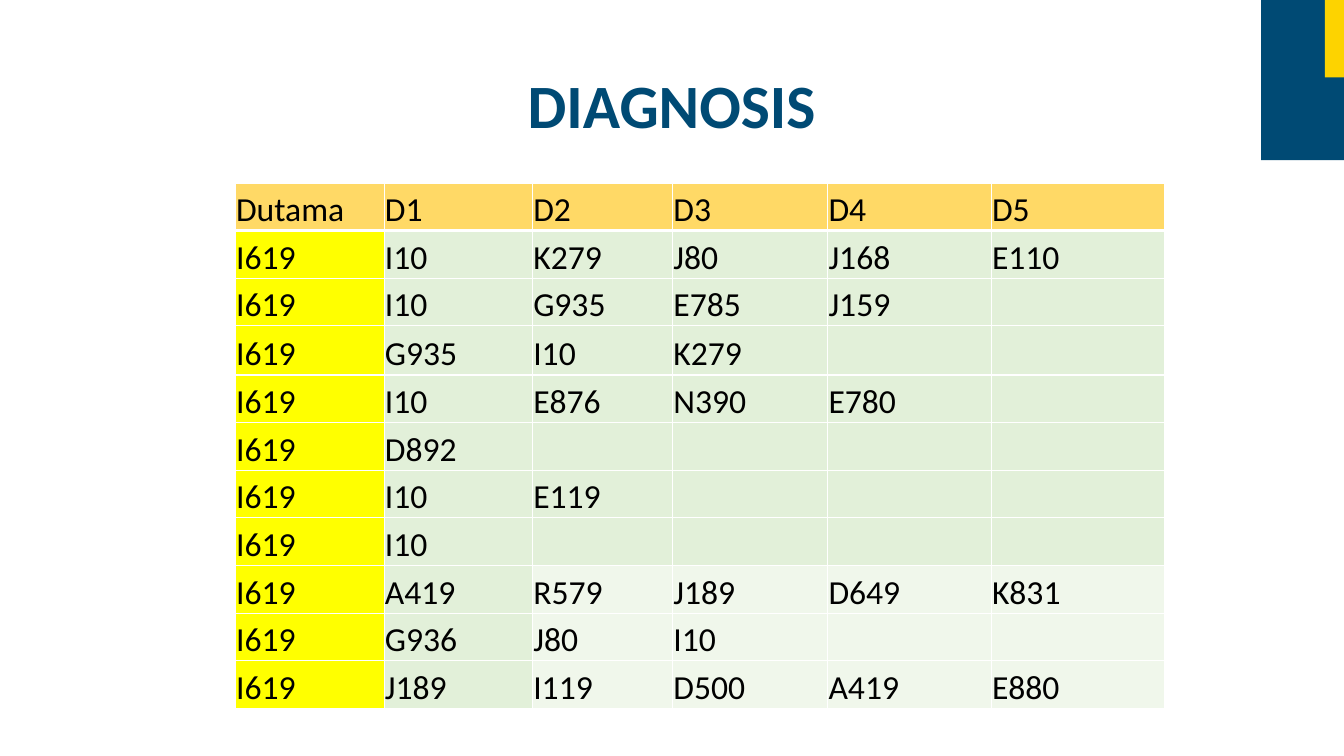
from lxml import etree
from pptx import Presentation
from pptx.dml.color import RGBColor
from pptx.enum import shapes, text
from pptx.oxml import ns
from pptx.util import Cm, Pt

NAVY = RGBColor(0x00, 0x4A, 0x74)
GOLD = RGBColor(0xFD, 0xD3, 0x00)
AMBER = RGBColor(0xFF, 0xD9, 0x66)
YELLOW = RGBColor(0xFF, 0xFF, 0x00)
GREEN = RGBColor(0xE2, 0xF0, 0xD9)
BLACK = RGBColor(0x00, 0x00, 0x00)
WHITE = RGBColor(0xFF, 0xFF, 0xFF)

DIAGNOSES = [
    ["Dutama", "D1", "D2", "D3", "D4", "D5"],
    ["I619", "I10", "K279", "J80", "J168", "E110"],
    ["I619", "I10", "G935", "E785", "J159", ""],
    ["I619", "G935", "I10", "K279", "", ""],
    ["I619", "I10", "E876", "N390", "E780", ""],
    ["I619", "D892", "", "", "", ""],
    ["I619", "I10", "E119", "", "", ""],
    ["I619", "I10", "", "", "", ""],
    ["I619", "A419", "R579", "J189", "D649", "K831"],
    ["I619", "G936", "J80", "I10", "", ""],
    ["I619", "J189", "I119", "D500", "A419", "E880"],
]
COLUMN_WIDTHS = [3.75, 3.74, 3.53, 3.91, 4.12, 4.37]
ROW_HEIGHT = 1.2
TALL_ROW, TALL_HEIGHT = 3, 1.24
FIRST_PALE_ROW, FIRST_PALE_COLUMN = 8, 2


def add_border(tc_pr, side, width):
    line = etree.SubElement(tc_pr, ns.qn(f"a:ln{side}"), w=str(Pt(width)))
    fill = etree.SubElement(line, ns.qn("a:solidFill"))
    etree.SubElement(fill, ns.qn("a:srgbClr"), val=str(WHITE))


prs = Presentation()
prs.slide_width, prs.slide_height = Cm(33.87), Cm(19.05)
s = prs.slides.add_slide(prs.slide_layouts[6])

# Diagnosis table
frame = s.shapes.add_table(len(DIAGNOSES), len(COLUMN_WIDTHS), Cm(5.93), Cm(4.61),
                           Cm(sum(COLUMN_WIDTHS)), Cm(ROW_HEIGHT * len(DIAGNOSES)))
table = frame.table
for column, width in zip(table.columns, COLUMN_WIDTHS):
    column.width = Cm(width)
for i, codes in enumerate(DIAGNOSES):
    table.rows[i].height = Cm(TALL_HEIGHT if i == TALL_ROW else ROW_HEIGHT)
    for j, code in enumerate(codes):
        cell = table.cell(i, j)
        cell.text = code
        cell.vertical_anchor = text.MSO_ANCHOR.BOTTOM
        cell.margin_left = cell.margin_right = cell.margin_top = Cm(0.02)
        cell.margin_bottom = 0
        font = cell.text_frame.paragraphs[0].font
        font.name, font.size, font.bold = "Calibri", Pt(24), False
        font.color.rgb = BLACK

        tc_pr = cell._tc.get_or_add_tcPr()
        for side in "LRTB":
            header_rule = (i, side) in [(0, "B"), (1, "T")]
            add_border(tc_pr, side, 3 if header_rule else 1)
        cell.fill.solid()
        cell.fill.fore_color.rgb = AMBER if i == 0 else YELLOW if j == 0 else GREEN
        if i >= FIRST_PALE_ROW and j >= FIRST_PALE_COLUMN:
            color = tc_pr.find(ns.qn("a:solidFill")).find(ns.qn("a:srgbClr"))
            etree.SubElement(color, ns.qn("a:alpha"), val="50000")

# Title
title = s.shapes.add_textbox(Cm(1.04), Cm(0.97), Cm(31.78), Cm(3.53))
tf = title.text_frame
tf.word_wrap = True
tf.vertical_anchor = text.MSO_ANCHOR.MIDDLE
p = tf.paragraphs[0]
p.text = "DIAGNOSIS"
p.alignment = text.PP_ALIGN.CENTER
p.line_spacing = 0.9
p.font.name, p.font.size, p.font.bold = "Calibri", Pt(44), True
p.font.color.rgb = NAVY

# Corner blocks
for left, width, height, color in [(31.78, 2.09, 4.04, NAVY), (33.39, 0.48, 1.95, GOLD)]:
    block = s.shapes.add_shape(shapes.MSO_SHAPE.RECTANGLE,
                               Cm(left), 0, Cm(width), Cm(height))
    block.shadow.inherit = False
    block.fill.solid()
    block.fill.fore_color.rgb = color
    block.line.fill.background()

prs.save("out.pptx")
